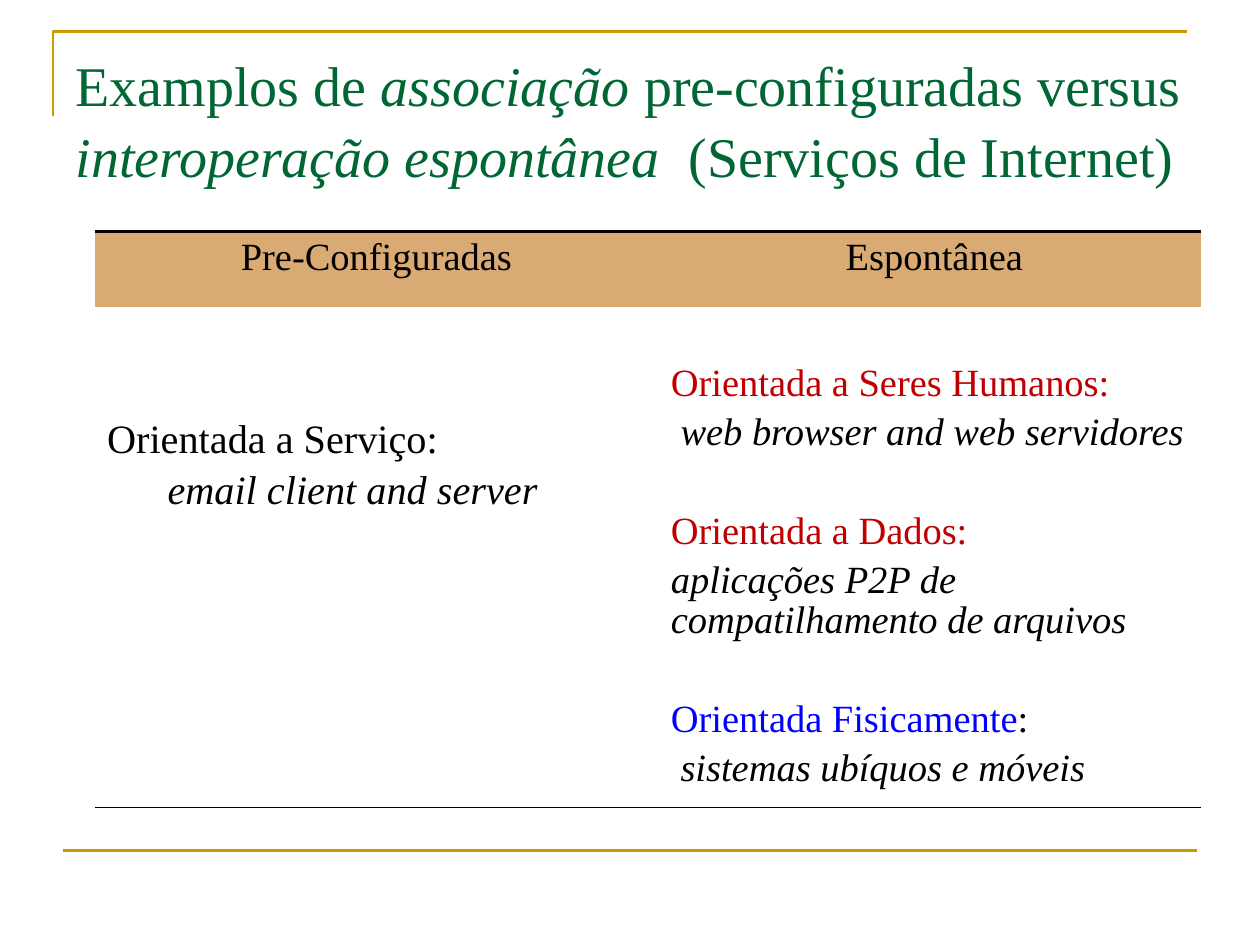
from dataclasses import dataclass

from lxml.etree import SubElement
from pptx import Presentation
from pptx.dml.color import RGBColor
from pptx.enum.text import MSO_ANCHOR, MSO_AUTO_SIZE, PP_ALIGN
from pptx.oxml.ns import qn
from pptx.util import Inches, Pt

FONT = "Times New Roman"
GOLD = RGBColor(0xCC, 0x99, 0x00)
GREEN = RGBColor(0x00, 0x66, 0x33)
TAN = RGBColor(0xD9, 0xAA, 0x73)
BLACK = RGBColor(0x00, 0x00, 0x00)
RED = RGBColor(0xC0, 0x00, 0x00)
BLUE = RGBColor(0x00, 0x00, 0xFF)

LINE_SPACING = 0.95
SPACE_BEFORE = 4.8
GROUP_GAP = 33.6


def grid(cells: float) -> int:
    """Length of a number of grid cells; the slide is 40 by 30 cells."""
    return Inches(cells * 0.25)


@dataclass(frozen=True)
class Words:
    text: str
    color: RGBColor = BLACK
    italic: bool = False


@dataclass(frozen=True)
class Line:
    words: tuple[Words, ...]
    before: float = SPACE_BEFORE
    indent: float = 0
    align: PP_ALIGN = PP_ALIGN.LEFT


@dataclass(frozen=True)
class Entry:
    lines: tuple[Line, ...]
    size: int = 22
    top: float = 0.2
    fill: RGBColor | None = None
    border: str = "lnB"
    border_width: float = 1


def add_words(paragraph, words: tuple[Words, ...], size: float) -> None:
    for part in words:
        run = paragraph.add_run()
        run.text = part.text
        run.font.name = FONT
        run.font.size = Pt(size)
        run.font.bold = False
        run.font.italic = part.italic
        run.font.color.rgb = part.color


def set_borders(cell, visible: str, width: float) -> None:
    properties = cell._tc.get_or_add_tcPr()
    for index, side in enumerate(("lnL", "lnR", "lnT", "lnB")):
        border = properties.makeelement(qn(f"a:{side}"), {})
        properties.insert(index, border)
        if side == visible:
            border.set("w", str(Pt(width)))
            color = SubElement(SubElement(border, qn("a:solidFill")), qn("a:srgbClr"))
            color.set("val", str(BLACK))
        else:
            SubElement(border, qn("a:noFill"))


def fill_cell(cell, entry: Entry) -> None:
    cell.margin_top = grid(entry.top)
    cell.vertical_anchor = MSO_ANCHOR.TOP
    if entry.fill is None:
        cell.fill.background()
    else:
        cell.fill.solid()
        cell.fill.fore_color.rgb = entry.fill
    set_borders(cell, entry.border, entry.border_width)
    frame = cell.text_frame
    for index, line in enumerate(entry.lines):
        paragraph = frame.paragraphs[0] if index == 0 else frame.add_paragraph()
        paragraph.alignment = line.align
        paragraph.line_spacing = LINE_SPACING
        paragraph.space_before = Pt(line.before if index else 0)
        if line.indent:
            paragraph._p.get_or_add_pPr().set("marL", str(grid(line.indent)))
        add_words(paragraph, line.words, entry.size)


def style_rule(rule) -> None:
    rule.line.color.rgb = GOLD
    rule.line.width = Pt(1.5)


def heading(text: str) -> Entry:
    line = Line((Words(text),), align=PP_ALIGN.CENTER)
    return Entry((line,), fill=TAN, border="lnT", border_width=1.5)


TITLE = (
    Words("Examplos de ", GREEN),
    Words("associação", GREEN, True),
    Words(" pre-configuradas versus ", GREEN),
    Words("interoperação espontânea ", GREEN, True),
    Words(" (Serviços de Internet)", GREEN),
)

PRECONFIGURED = Entry(
    (
        Line((Words("Orientada a Serviço:"),)),
        Line((Words("email client and server", italic=True),), indent=1.92),
    ),
    size=23,
    top=3.56,
)

SPONTANEOUS = Entry(
    (
        Line((Words("Orientada a Seres Humanos:", RED),)),
        Line((Words(" web browser and web servidores", italic=True),)),
        Line((Words("Orientada a Dados:", RED),), before=GROUP_GAP),
        Line((Words("aplicações P2P de compatilhamento de arquivos", italic=True),)),
        Line((Words("Orientada Fisicamente", BLUE), Words(":")), before=GROUP_GAP),
        Line((Words(" sistemas ubíquos e móveis", italic=True),)),
    ),
    top=1.8,
)

ENTRIES = (
    (heading("Pre-Configuradas"), heading(" Espontânea")),
    (PRECONFIGURED, SPONTANEOUS),
)
COLUMN_WIDTHS = (17.9, 17.22)
ROW_HEIGHTS = (2.4, 15.88)


def main() -> None:
    deck = Presentation()
    deck.slide_width, deck.slide_height = grid(40), grid(30)
    slide = deck.slides.add_slide(deck.slide_layouts[5])
    shapes = slide.shapes

    # Gold corner and bottom rule
    builder = shapes.build_freeform(grid(1.68), grid(3.68))
    builder.add_line_segments(
        [(grid(1.68), grid(1)), (grid(37.68), grid(1))], close=False
    )
    corner = builder.convert_to_shape()
    corner.shadow.inherit = False
    corner.fill.background()
    style_rule(corner)
    bottom_rule = shapes.add_connector(1, grid(2), grid(27), grid(38), grid(27))
    SubElement(bottom_rule._element.spPr, qn("a:effectLst"))
    style_rule(bottom_rule)

    # Title
    title = shapes.title
    title.left, title.top = grid(2), grid(1.2)
    title.width, title.height = grid(36), grid(4.64)
    frame = title.text_frame
    frame.auto_size = MSO_AUTO_SIZE.NONE
    frame.word_wrap = True
    frame.vertical_anchor = MSO_ANCHOR.TOP
    frame.margin_top = grid(0.3)
    frame.paragraphs[0].alignment = PP_ALIGN.LEFT
    frame.paragraphs[0].line_spacing = 1.05
    add_words(frame.paragraphs[0], TITLE, 32)

    # Comparison table
    table = shapes.add_table(
        len(ROW_HEIGHTS), len(COLUMN_WIDTHS), grid(3), grid(7.35),
        grid(sum(COLUMN_WIDTHS)), grid(sum(ROW_HEIGHTS)),
    ).table
    table.first_row = table.horz_banding = False
    for column, width in zip(table.columns, COLUMN_WIDTHS):
        column.width = grid(width)
    for row, height, entries in zip(table.rows, ROW_HEIGHTS, ENTRIES):
        row.height = grid(height)
        for cell, entry in zip(row.cells, entries):
            fill_cell(cell, entry)

    deck.save("out.pptx")


if __name__ == "__main__":
    main()
